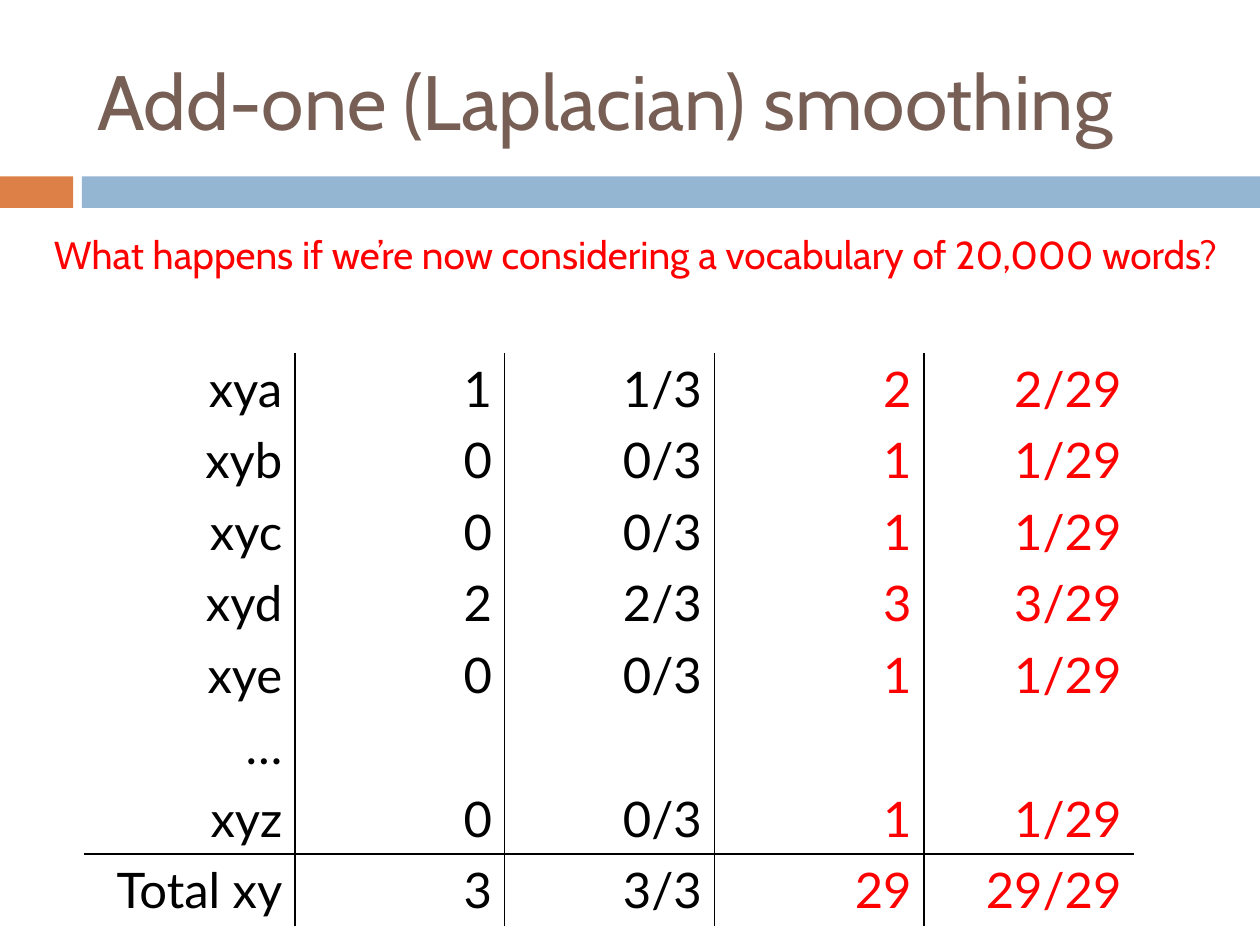
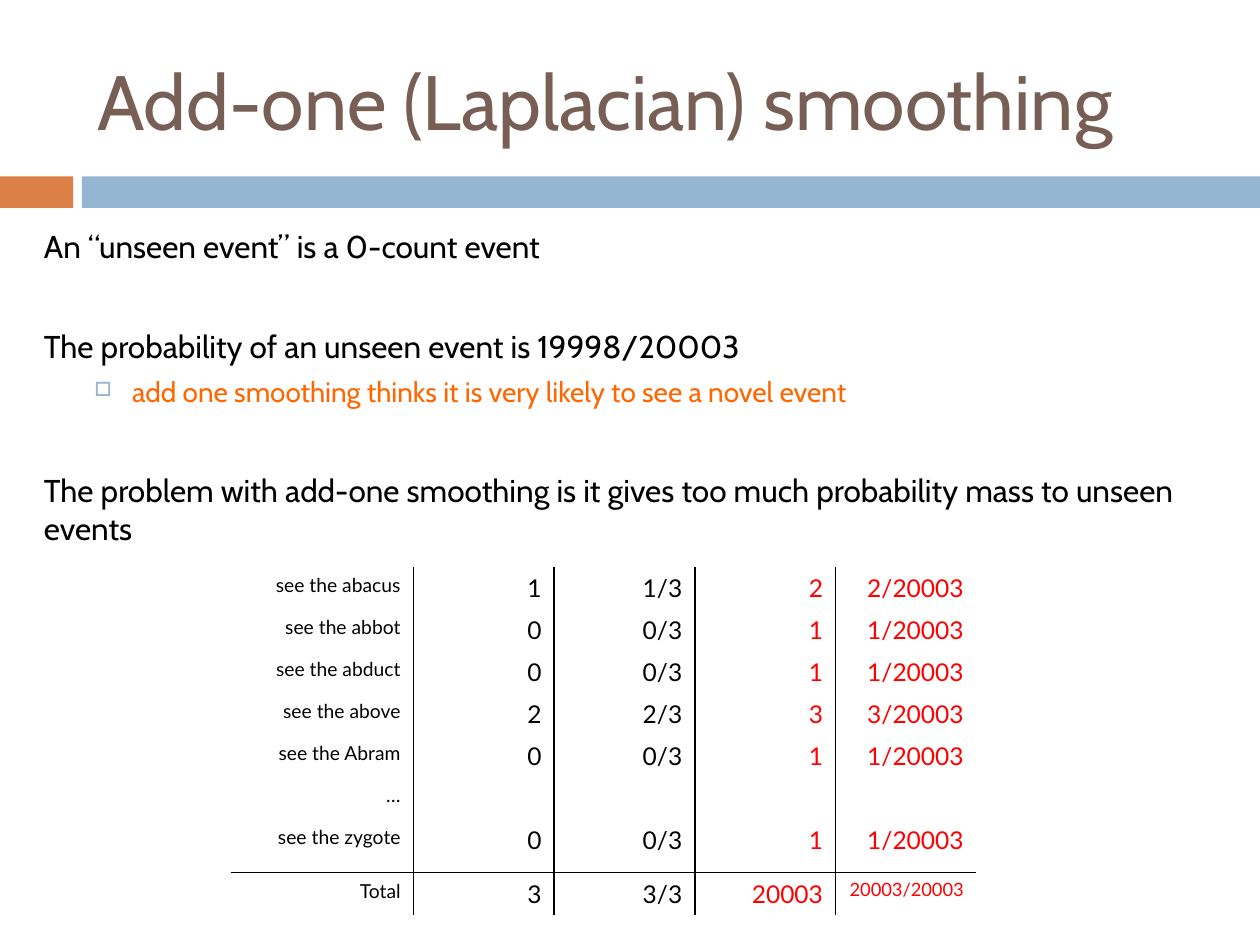
from dataclasses import dataclass
from typing import Optional

from lxml import etree
from pptx import Presentation
from pptx import util as u
from pptx.dml import color
from pptx.enum import shapes, text
from pptx.oxml import ns

COLORS = {
    "title": "775F55",
    "orange_band": "DD8047",
    "blue_band": "94B6D2",
    "ink": "000000",
    "smoothed": "FF0000",
    "remark": "FF6600",
}
HEADING_FONT = "Cabin"
TABLE_FONT = "Lato"
TITLE = "Add-one (Laplacian) smoothing"
COUNTS = [1, 0, 0, 2, 0, None, 0]
NO_STYLE = "{2D5ABB26-0587-4C30-8999-92F81FD0307C}"
BAND_TOP, BAND_HEIGHT = 1.4, 0.25


@dataclass(frozen=True)
class Band:
    left: float
    width: float
    fill: str


@dataclass(frozen=True)
class Line:
    content: str
    size: float = 18
    tone: str = "ink"
    before: float = 0
    bullet: bool = False


@dataclass(frozen=True)
class CountTable:
    left: float
    top: float
    width: float
    height: float
    label_width: float
    labels: list[str]
    vocabulary: int
    size: float
    label_size: float
    total_size: float
    gap_above_total: float = 0


BANDS = [Band(0, 0.58, "orange_band"), Band(0.65, 9.35, "blue_band")]

QUESTION = [
    Line("What happens if we’re now considering a vocabulary of 20,000 words?",
         size=22.2, tone="smoothed"),
]
UNSEEN_EVENTS = [
    Line("An “unseen event” is a 0-count event"),
    Line("The probability of an unseen event is 19998/20003", before=36),
    Line("add one smoothing thinks it is very likely to see a novel event",
         size=16, tone="remark", before=5.5, bullet=True),
    Line("The problem with add-one smoothing is it gives too much probability "
         "mass to unseen events", before=36),
]

LETTERS = CountTable(
    0.67, 2.8, 8.33, 4.53, 1.67,
    ["xya", "xyb", "xyc", "xyd", "xye", "…", "xyz", "Total xy"],
    vocabulary=26, size=28, label_size=28, total_size=28)
WORDS = CountTable(
    1.83, 4.5, 5.92, 2.75, 1.45,
    ["see the abacus", "see the abbot", "see the abduct", "see the above",
     "see the Abram", "…", "see the zygote", "Total"],
    vocabulary=20000, size=14, label_size=11, total_size=10.5,
    gap_above_total=0.09)


def rgb(name: str) -> color.RGBColor:
    return color.RGBColor.from_string(COLORS[name])


def write(paragraph, content: str, *, size: float, font: str = HEADING_FONT,
          tone: str = "ink", align=text.PP_ALIGN.LEFT, before: float = 0) -> None:
    paragraph.alignment = align
    paragraph.space_before = u.Pt(before)
    if not content:
        etree.SubElement(paragraph._p, ns.qn("a:endParaRPr"), sz=str(int(size * 100)))
        return
    run = paragraph.add_run()
    run.text = content
    run.font.size = u.Pt(size)
    run.font.name = font
    run.font.color.rgb = rgb(tone)


def add_bullet(paragraph) -> None:
    properties = paragraph._p.get_or_add_pPr()
    properties.set("marL", str(u.Inches(0.7)))
    properties.set("indent", str(u.Inches(-0.3)))
    bullet_color = etree.SubElement(properties, ns.qn("a:buClr"))
    etree.SubElement(bullet_color, ns.qn("a:srgbClr"), val=COLORS["blue_band"])
    etree.SubElement(properties, ns.qn("a:buSzPct"), val="70000")
    etree.SubElement(properties, ns.qn("a:buChar"), char="□")


def add_slide(presentation):
    slide = presentation.slides.add_slide(presentation.slide_layouts[5])
    for band in BANDS:
        shape = slide.shapes.add_shape(
            shapes.MSO_SHAPE.RECTANGLE, u.Inches(band.left), u.Inches(BAND_TOP),
            u.Inches(band.width), u.Inches(BAND_HEIGHT))
        shape.shadow.inherit = False
        shape.fill.solid()
        shape.fill.fore_color.rgb = rgb(band.fill)
        shape.line.fill.background()
    title = slide.shapes.title
    title.left, title.top = u.Inches(0.67), u.Inches(0.25)
    title.width, title.height = u.Inches(8.92), u.Inches(1.08)
    frame = title.text_frame
    frame.auto_size = text.MSO_AUTO_SIZE.NONE
    frame.vertical_anchor = text.MSO_ANCHOR.MIDDLE
    write(frame.paragraphs[0], TITLE, size=44, tone="title")
    return slide


def add_lines(slide, left: float, top: float, width: float, height: float,
              lines: list[Line]) -> None:
    box = slide.shapes.add_textbox(
        u.Inches(left), u.Inches(top), u.Inches(width), u.Inches(height))
    frame = box.text_frame
    frame.word_wrap = True
    for index, line in enumerate(lines):
        paragraph = frame.add_paragraph() if index else frame.paragraphs[0]
        write(paragraph, line.content, size=line.size, tone=line.tone,
              before=line.before)
        if line.bullet:
            add_bullet(paragraph)


def count_row(label: str, count: Optional[int], smoothed: int, total: int,
              smoothed_total: int) -> list[str]:
    if count is None:
        return [label, "", "", "", ""]
    return [label, str(count), f"{count}/{total}",
            str(smoothed), f"{smoothed}/{smoothed_total}"]


def count_rows(spec: CountTable) -> list[list[str]]:
    total = sum(count or 0 for count in COUNTS)
    smoothed_total = total + spec.vocabulary
    rows = [count_row(label, count, (count or 0) + 1, total, smoothed_total)
            for label, count in zip(spec.labels, COUNTS)]
    rows.append(count_row(spec.labels[-1], total, smoothed_total, total, smoothed_total))
    return rows


def set_borders(cell, sides: dict[str, bool]) -> None:
    properties = cell._tc.get_or_add_tcPr()
    for index, (side, visible) in enumerate(sides.items()):
        border = etree.Element(ns.qn(f"a:ln{side}"), w=str(u.Pt(1)))
        if visible:
            fill = etree.SubElement(border, ns.qn("a:solidFill"))
            etree.SubElement(fill, ns.qn("a:srgbClr"), val=COLORS["ink"])
        else:
            etree.SubElement(border, ns.qn("a:noFill"))
        properties.insert(index, border)


def add_count_table(slide, spec: CountTable) -> None:
    rows = count_rows(spec)
    last_row, last_column = len(rows) - 1, len(rows[0]) - 1
    frame = slide.shapes.add_table(
        len(rows), len(rows[0]), u.Inches(spec.left), u.Inches(spec.top),
        u.Inches(spec.width), u.Inches(spec.height))
    table = frame.table
    table.first_row = table.horz_banding = False
    table._tbl.tblPr.find(ns.qn("a:tableStyleId")).text = NO_STYLE
    for index, column in enumerate(table.columns):
        value_width = (spec.width - spec.label_width) / last_column
        column.width = u.Inches(value_width if index else spec.label_width)
    row_height = (spec.height - spec.gap_above_total) / len(rows)
    for index, row in enumerate(table.rows):
        gap = spec.gap_above_total if index == last_row - 1 else 0
        row.height = u.Inches(row_height + gap)
    for r, values in enumerate(rows):
        for c, value in enumerate(values):
            cell = table.cell(r, c)
            cell.fill.background()
            size = spec.size if c else spec.label_size
            if (r, c) == (last_row, last_column):
                size = spec.total_size
            write(cell.text_frame.paragraphs[0], value, size=size, font=TABLE_FONT,
                  tone="smoothed" if c > 2 else "ink", align=text.PP_ALIGN.RIGHT)
            set_borders(cell, {"L": c > 0, "R": c < last_column,
                               "T": r == last_row, "B": r == last_row - 1})


def main() -> None:
    presentation = Presentation()
    presentation.slide_width = u.Inches(10)
    presentation.slide_height = u.Inches(7.5)

    letters_slide = add_slide(presentation)
    add_count_table(letters_slide, LETTERS)
    add_lines(letters_slide, 0.33, 1.78, 9.75, 0.72, QUESTION)

    words_slide = add_slide(presentation)
    add_lines(words_slide, 0.25, 1.75, 9.5, 2.17, UNSEEN_EVENTS)
    add_count_table(words_slide, WORDS)

    presentation.save("out.pptx")


if __name__ == "__main__":
    main()
